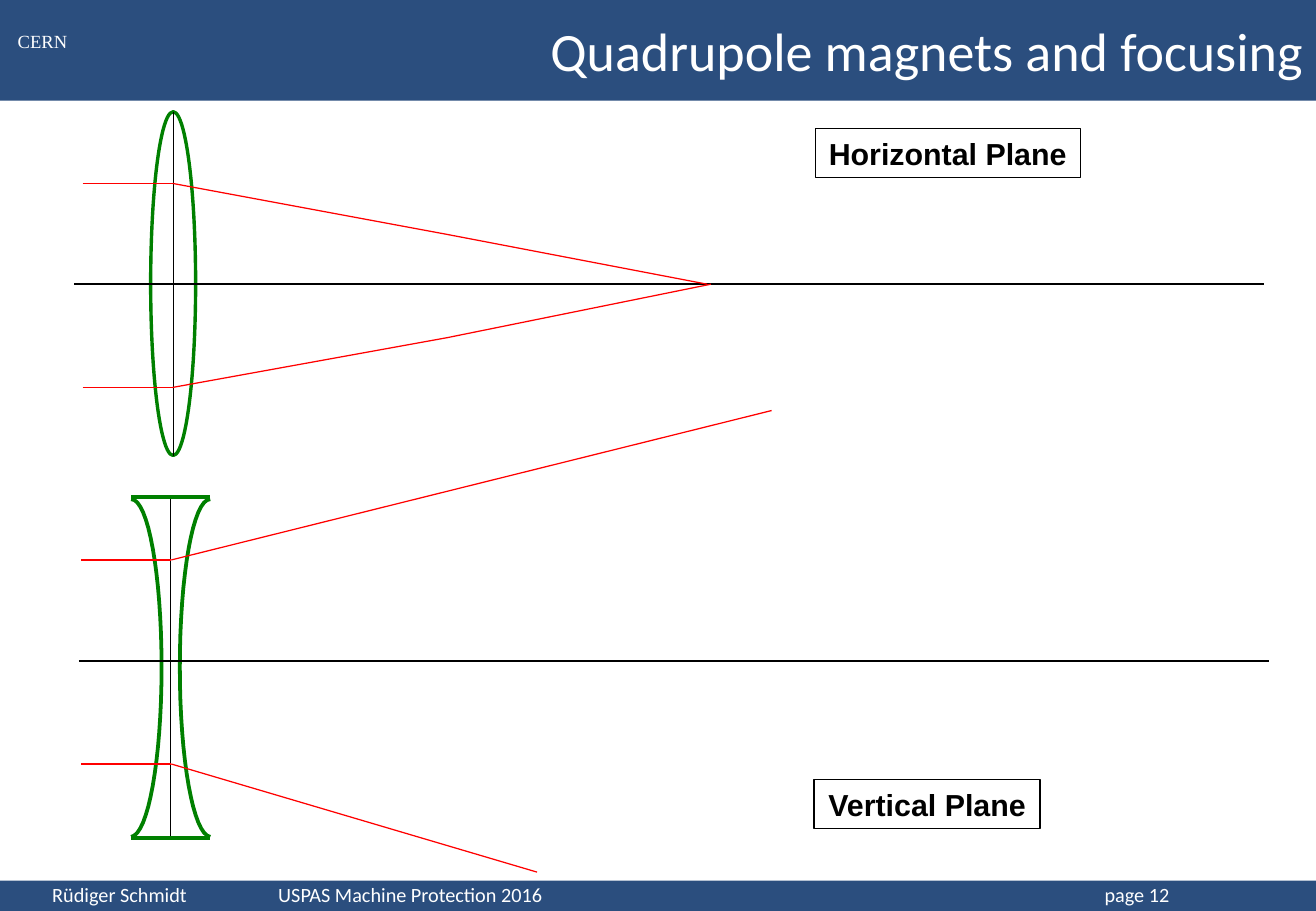
from lxml.etree import SubElement
from pptx import Presentation
from pptx.dml.color import RGBColor
from pptx.enum.shapes import MSO_CONNECTOR, MSO_SHAPE
from pptx.enum.text import MSO_ANCHOR, PP_ALIGN
from pptx.oxml.ns import qn
from pptx.util import Inches, Pt

COLORS = {"bar": "2B4E7E", "white": "FFFFFF", "black": "000000",
          "lens": "008000", "ray": "FF0000"}
WIDE, HIGH = 10.83, 7.5
RAYS = (-0.83, 0.85)  # heights of the incoming rays about the axis


def color(name):
    return RGBColor.from_string(COLORS[name])


def put(frame, words, size=18, font="Calibri", ink="white", bold=False,
        align=PP_ALIGN.LEFT, anchor=MSO_ANCHOR.TOP, wrap=True, tabs=()):
    frame.word_wrap = wrap
    frame.vertical_anchor = anchor
    par = frame.paragraphs[0]
    par.text = words
    par.alignment = align
    if tabs:
        stops = SubElement(par._p.get_or_add_pPr(), qn("a:tabLst"))
        for pos in tabs:
            SubElement(stops, qn("a:tab"), pos=str(Inches(pos)), algn="l")
    par.font.size, par.font.name, par.font.bold = Pt(size), font, bold
    par.font.color.rgb = color(ink)


def shape(slide, kind, box, fill=None, line=None, width=0.75):
    item = slide.shapes.add_shape(kind, *map(Inches, box))
    dress(item, fill, line, width)
    return item


def dress(item, fill, line, width):
    item.shadow.inherit = False
    if fill:
        item.fill.solid()
        item.fill.fore_color.rgb = color(fill)
    else:
        item.fill.background()
    if line:
        item.line.color.rgb = color(line)
        item.line.width = Pt(width)
    else:
        item.line.fill.background()


def trace(slide, points, ink, width=0.75):
    """Join the points with straight lines."""
    for start, end in zip(points, points[1:]):
        line = slide.shapes.add_connector(
            MSO_CONNECTOR.STRAIGHT, *map(Inches, start + end))
        line.line.color.rgb = color(ink)
        line.line.width = Pt(width)
        SubElement(line._element.spPr, qn("a:effectLst"))


def bezier(a, b, c, d, steps=16):
    for i in range(steps + 1):
        t = i / steps
        u = 1 - t
        yield tuple(u**3 * p + 3 * u * u * t * q + 3 * u * t * t * r + t**3 * s
                    for p, q, r, s in zip(a, b, c, d))


def frame(slide, box):
    """Header and footer bars with their text, and the title."""
    x, y, w, h = box
    shape(slide, MSO_SHAPE.RECTANGLE, (x, y, w, 0.83), "bar")
    foot = shape(slide, MSO_SHAPE.RECTANGLE, (x, y + h - 0.25, w, 0.25), "bar")
    title = slide.shapes.title
    foot._element.addnext(title._element)
    title.left, title.top, title.width, title.height = map(
        Inches, (x + 0.9, y, w - 0.9, 0.83))
    put(title.text_frame, "Quadrupole magnets and focusing", size=32,
        align=PP_ALIGN.RIGHT, anchor=MSO_ANCHOR.MIDDLE)
    mark = slide.shapes.add_textbox(*map(Inches, (x - 0.01, y + 0.2, 0.72, 0.29)))
    put(mark.text_frame, "CERN", size=11, font="Times New Roman",
        align=PP_ALIGN.CENTER)
    note = slide.shapes.add_textbox(
        *map(Inches, (x, y + h - 0.25, w - 0.18, 0.26)))
    note.text_frame.margin_left = Inches(0.43)
    put(note.text_frame, "Rüdiger Schmidt\tUSPAS Machine Protection 2016\tpage 12",
        size=12, anchor=MSO_ANCHOR.BOTTOM, tabs=(1.86, 8.66))


def label(slide, box, words):
    item = shape(slide, MSO_SHAPE.RECTANGLE, box, line="black")
    put(item.text_frame, words, font="Arial", ink="black", bold=True,
        align=PP_ALIGN.CENTER, wrap=False)


def plane(slide, x, axis, left, paths):
    """Optical axis, incoming rays and their paths behind a lens at x."""
    trace(slide, [(left, axis), (left + 9.79, axis)], "black", 1)
    for rise, path in zip(RAYS, paths):
        bends = [(x + dx, axis + dy) for dx, dy in path]
        trace(slide, [(x - 0.74, axis + rise), (x, axis + rise)] + bends, "ray")


def convex(slide, box):
    x, y, w, h = box
    shape(slide, MSO_SHAPE.OVAL, box, line="lens", width=2)
    mid = x + w / 2
    trace(slide, [(mid, y), (mid, y + h)], "black")


def concave(slide, box):
    x, y, w, h = box
    mid = x + w / 2
    trace(slide, [(mid, y), (mid, y + h)], "black")
    for edge in (y, y + h):
        trace(slide, [(x, edge), (x + w, edge)], "lens", 2.25)
    # Each side is two quarter arcs, mirrored about the middle
    top, low, half = y + 0.02, y + h - 0.01, y + h / 2
    for start, way in ((x, 1), (x + w, -1)):
        mouth, bend, waist = (start + way * d for d in (0, 0.14, 0.25))
        arc = list(bezier((mouth, top), (bend, top),
                          (waist, top + 0.62), (waist, half)))
        arc += list(bezier((waist, half), (waist, low - 0.64),
                           (bend, low - 0.02), (mouth, low)))[1:]
        dots = [(Inches(px), Inches(py)) for px, py in arc]
        path = slide.shapes.build_freeform(*dots[0])
        path.add_line_segments(dots[1:], close=False)
        dress(path.convert_to_shape(), None, "lens", 2.25)


def main():
    deck = Presentation()
    deck.slide_width, deck.slide_height = Inches(WIDE), Inches(HIGH)
    slide = deck.slides.add_slide(deck.slide_layouts[5])
    frame(slide, (0, 0, WIDE, HIGH))
    # Focusing in the horizontal plane
    convex(slide, (1.24, 0.92, 0.37, 2.83))
    plane(slide, 1.42, 2.34, 0.61,
          [[(2.26, -0.41), (4.4, 0)], [(2.26, 0.44), (4.43, 0)]])
    label(slide, (6.71, 1.06, 2.18, 0.4), "Horizontal Plane")
    # Defocusing in the vertical plane
    concave(slide, (1.08, 4.09, 0.65, 2.81))
    plane(slide, 1.41, 5.44, 0.65, [[(4.94, -2.06)], [(3.01, 1.74)]])
    label(slide, (6.7, 6.42, 1.86, 0.4), "Vertical Plane")
    deck.save("out.pptx")


if __name__ == "__main__":
    main()
